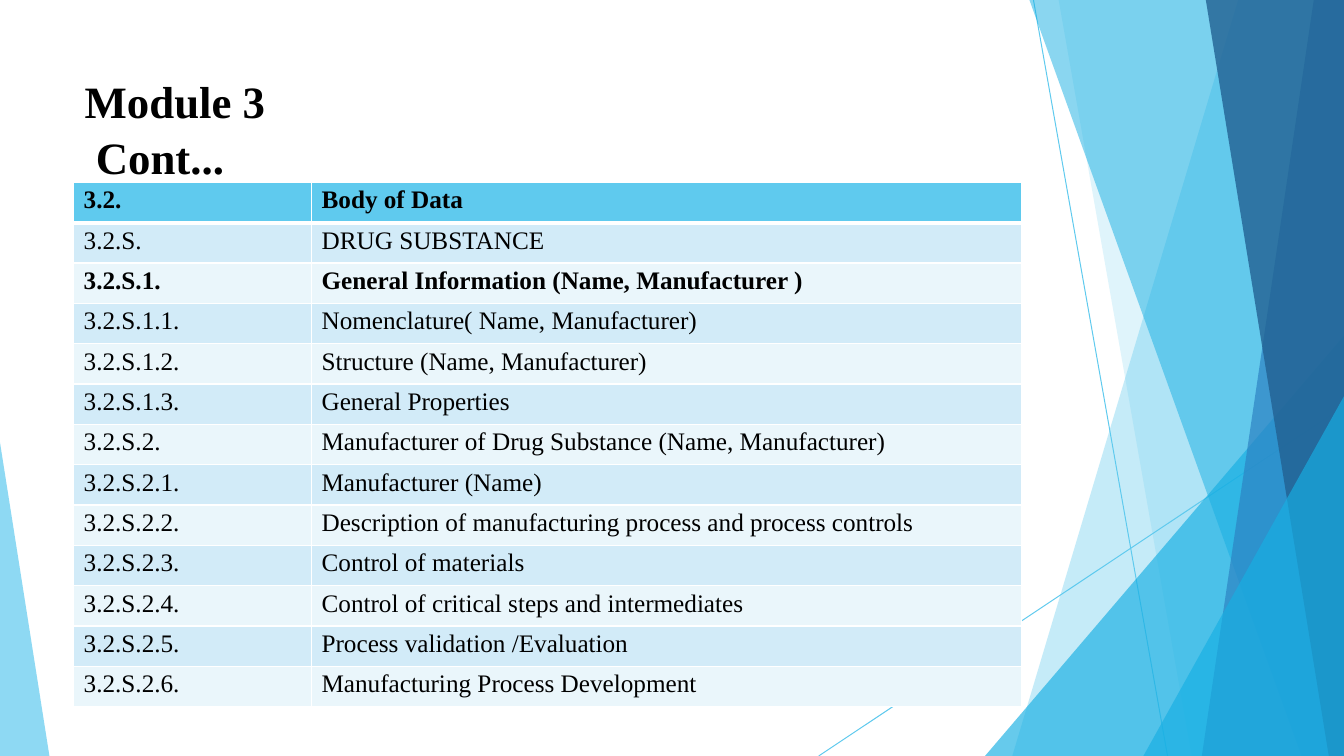
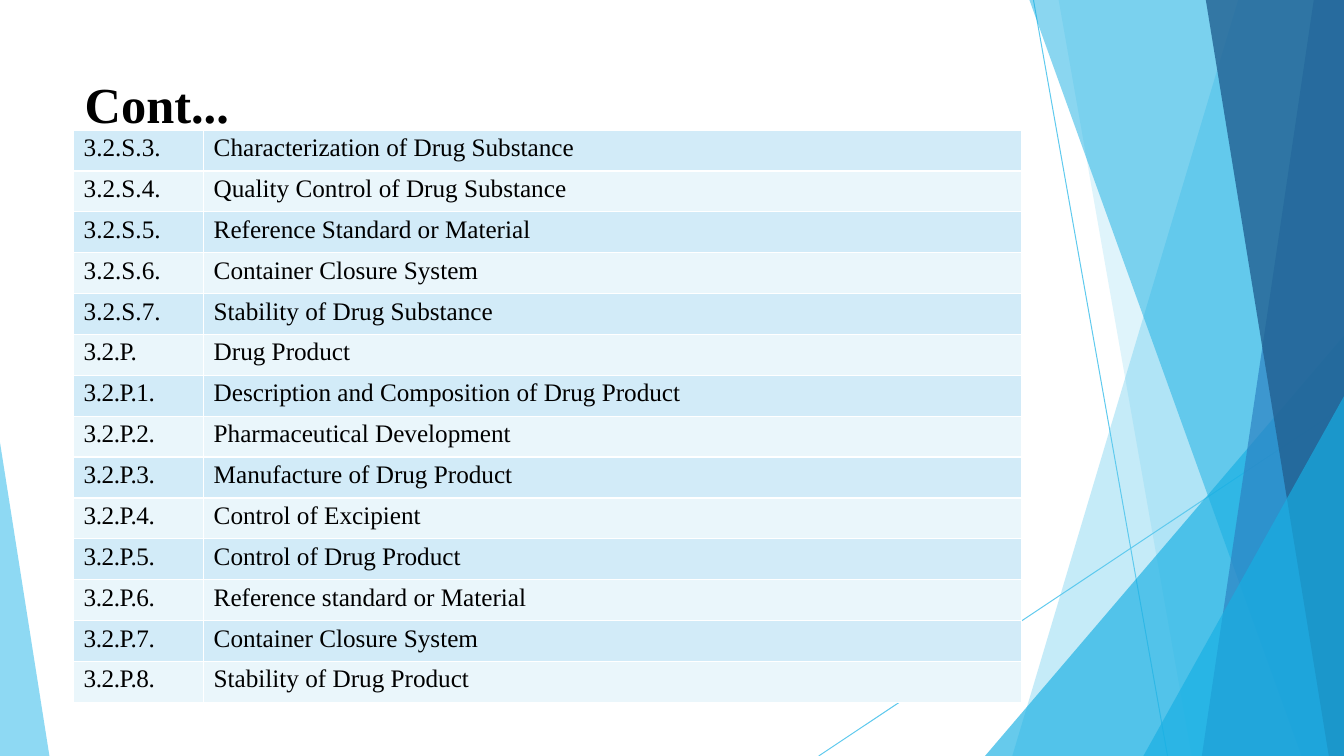
from dataclasses import dataclass

from lxml.etree import SubElement
from pptx import Presentation
from pptx.dml.color import RGBColor
from pptx.enum.shapes import MSO_CONNECTOR as Link
from pptx.enum.text import MSO_ANCHOR as Anchor, MSO_AUTO_SIZE as Auto, PP_ALIGN as Align
from pptx.oxml import parse_xml
from pptx.oxml.ns import nsdecls, qn
from pptx.util import Inches, Pt

WIDTH, HEIGHT = 13.33, 7.5
FONT = "Times New Roman"
BLACK, WHITE = "000000", "FFFFFF"
SKY, AZURE, BLUE, NAVY = "5FCAEE", "17AFE3", "2D83C3", "226192"
BANDS = ("D2EBF8", "EAF6FB")


@dataclass(frozen=True)
class Facet:
    """A see-through polygon of the backdrop."""
    hue: str
    alpha: int
    points: tuple


@dataclass(frozen=True)
class Row:
    """A table row: section code, its name and its weight."""
    code: str
    name: str
    bold: bool = False


@dataclass(frozen=True)
class Page:
    """A slide with a title above a two-column table."""
    title: str
    size: int
    wide: float
    high: float
    top: float
    depth: float
    split: float
    head: bool
    rows: tuple


def right(*edge: tuple) -> tuple:
    """Close an edge along the right side of the slide."""
    return (*edge, (WIDTH, HEIGHT))


LINES = (((10.25, 0), (11.58, HEIGHT)), ((WIDTH, 4.03), (8.12, HEIGHT)))
FACETS = (
    Facet(SKY, 36, right((WIDTH, 0), (12.28, 0), (10.04, HEIGHT))),
    Facet(SKY, 20, right((WIDTH, 0), (10.5, 0), (11.82, HEIGHT))),
    Facet(AZURE, 66, right((WIDTH, 3.33), (9.77, HEIGHT))),
    Facet(AZURE, 50, right((WIDTH, 0), (10.21, 0), (12.91, HEIGHT))),
    Facet(BLUE, 70, right((WIDTH, 0), (13.03, 0), (11.92, HEIGHT))),
    Facet(NAVY, 80, right((WIDTH, 0), (11.96, 0), (13.18, HEIGHT))),
    Facet(AZURE, 66, right((WIDTH, 3.93), (11.34, HEIGHT))),
    Facet(SKY, 70, ((0, 4.39), (0, HEIGHT), (0.49, HEIGHT))),
)

PAGES = (
    Page("Module 3 Cont...", 32, 1.82, 1.1, 1.81, 5.2, 2.36, True, (
        Row("3.2.", "Body of Data", True),
        Row("3.2.S.", "DRUG SUBSTANCE"),
        Row("3.2.S.1.", "General Information (Name, Manufacturer )", True),
        Row("3.2.S.1.1.", "Nomenclature( Name, Manufacturer)"),
        Row("3.2.S.1.2.", "Structure (Name, Manufacturer)"),
        Row("3.2.S.1.3.", "General Properties"),
        Row("3.2.S.2.", "Manufacturer of Drug Substance (Name, Manufacturer)"),
        Row("3.2.S.2.1.", "Manufacturer (Name)"),
        Row("3.2.S.2.2.", "Description of manufacturing process and process controls"),
        Row("3.2.S.2.3.", "Control of materials"),
        Row("3.2.S.2.4.", "Control of critical steps and intermediates"),
        Row("3.2.S.2.5.", "Process validation /Evaluation"),
        Row("3.2.S.2.6.", "Manufacturing Process Development"),
    )),
    Page("Cont...", 36, 1.46, 0.63, 1.29, 5.68, 1.29, False, (
        Row("3.2.S.3.", "Characterization of Drug Substance"),
        Row("3.2.S.4.", "Quality Control of Drug Substance"),
        Row("3.2.S.5.", "Reference Standard or Material"),
        Row("3.2.S.6.", "Container Closure System"),
        Row("3.2.S.7.", "Stability of Drug Substance"),
        Row("3.2.P.", "Drug Product"),
        Row("3.2.P.1.", "Description and Composition of Drug Product"),
        Row("3.2.P.2.", "Pharmaceutical Development"),
        Row("3.2.P.3.", "Manufacture of Drug Product"),
        Row("3.2.P.4.", "Control of Excipient"),
        Row("3.2.P.5.", "Control of Drug Product"),
        Row("3.2.P.6.", "Reference standard or Material"),
        Row("3.2.P.7.", "Container Closure System"),
        Row("3.2.P.8.", "Stability of Drug Product"),
    )),
)


def paint(form, hue: str) -> None:
    """Give a fill one solid colour."""
    form.solid()
    form.fore_color.rgb = RGBColor.from_string(hue)


def style(para, size: int, bold: bool) -> None:
    """Set the font of every run in a paragraph."""
    for run in para.runs:
        font = run.font
        font.name, font.size, font.bold = FONT, Pt(size), bold
        paint(font.fill, BLACK)


def add_line(slide, start: tuple, end: tuple):
    """Draw a thin line of the backdrop."""
    line = slide.shapes.add_connector(Link.STRAIGHT, *map(Inches, start + end))
    line.line.width = Pt(0.72)
    paint(line.line.fill, SKY)
    SubElement(line.element.spPr, qn("a:effectLst"))
    return line


def add_facet(slide, facet: Facet):
    """Draw one polygon of the backdrop."""
    first, *rest = [tuple(map(Inches, point)) for point in facet.points]
    pen = slide.shapes.build_freeform(*first)
    pen.add_line_segments(rest, close=True)
    shape = pen.convert_to_shape()
    shape.shadow.inherit = False
    paint(shape.fill, facet.hue)
    shape.line.fill.background()
    tint = shape.element.spPr.find(f"{qn('a:solidFill')}/{qn('a:srgbClr')}")
    SubElement(tint, qn("a:alpha"), val=str(facet.alpha * 1000))
    return shape


def set_back(slide) -> None:
    """Draw the backdrop and hand it to the layout that the slides share."""
    layout = slide.slide_layout
    for holder in list(layout.placeholders)[1:]:
        layout.shapes.element.remove(holder.element)
    parts = [add_line(slide, *ends) for ends in LINES]
    parts += [add_facet(slide, facet) for facet in FACETS]
    for part in parts:
        layout.shapes.element.append(part.element)


def add_title(slide, page: Page) -> None:
    """Place and format the title."""
    title = slide.shapes.title
    title.left, title.top = Inches(0.83), Inches(0.69)
    title.width, title.height = Inches(page.wide), Inches(page.high)
    frame = title.text_frame
    frame.text = page.title
    frame.word_wrap, frame.auto_size = True, Auto.SHAPE_TO_FIT_TEXT
    frame.vertical_anchor = Anchor.TOP
    frame.margin_left = frame.margin_right = frame.margin_bottom = 0
    frame.margin_top = Inches(0.01)
    para = frame.paragraphs[0]
    para.alignment, para.line_spacing, para.space_before = Align.LEFT, 1.05, Pt(1)
    props = para._p.get_or_add_pPr()
    props.set("marL", str(Inches(0.12)))
    props.set("indent", str(-Inches(0.11)))
    style(para, page.size, True)


def add_rules(cell, top: int, base: int) -> None:
    """Draw white borders round a cell, with widths in points."""
    props = cell._tc.get_or_add_tcPr()
    for spot, (side, width) in enumerate(zip("LRTB", (1, 1, top, base))):
        props.insert(spot, parse_xml(
            f'<a:ln{side} {nsdecls("a")} w="{Pt(width)}"><a:solidFill>'
            f'<a:srgbClr val="{WHITE}"/></a:solidFill></a:ln{side}>'))


def fill_cell(cell, text: str, bold: bool, hue: str) -> None:
    """Write and colour one table cell."""
    cell.margin_left, cell.margin_top = Inches(0.1), Inches(0.04)
    cell.margin_right = cell.margin_bottom = 0
    cell.vertical_anchor = Anchor.TOP
    paint(cell.fill, hue)
    para = cell.text_frame.paragraphs[0]
    para.text, para.space_before = text, Pt(3)
    style(para, 18, bold)
    if text.startswith("3.2.P."):
        para.runs[0]._r.get_or_add_rPr().set("spc", "-30")


def add_grid(slide, page: Page) -> None:
    """Build the table of sections."""
    count, width = len(page.rows), 9.4
    grid = slide.shapes.add_table(count, 2, Inches(0.73), Inches(page.top),
                                  Inches(width), Inches(page.depth)).table
    grid.first_row, grid.horz_banding = page.head, False
    for col, size in zip(grid.columns, (page.split, width - page.split)):
        col.width = Inches(size)
    for spot, row in enumerate(page.rows):
        grid.rows[spot].height = Inches(page.depth / count)
        hue = SKY if page.head and spot == 0 else BANDS[(spot - page.head) % 2]
        top = 3 if page.head and spot == 1 else 1
        base = 3 if page.head and spot == 0 else 1
        for col, text in enumerate((row.code, row.name)):
            cell = grid.cell(spot, col)
            fill_cell(cell, text, row.bold, hue)
            add_rules(cell, top, base)


def main() -> None:
    """Build and save the deck."""
    deck = Presentation()
    deck.slide_width, deck.slide_height = Inches(WIDTH), Inches(HEIGHT)
    layout = deck.slide_layouts[5]
    slides = [deck.slides.add_slide(layout) for _ in PAGES]
    set_back(slides[0])
    for slide, page in zip(slides, PAGES):
        add_title(slide, page)
        add_grid(slide, page)
    deck.save("out.pptx")


if __name__ == "__main__":
    main()
